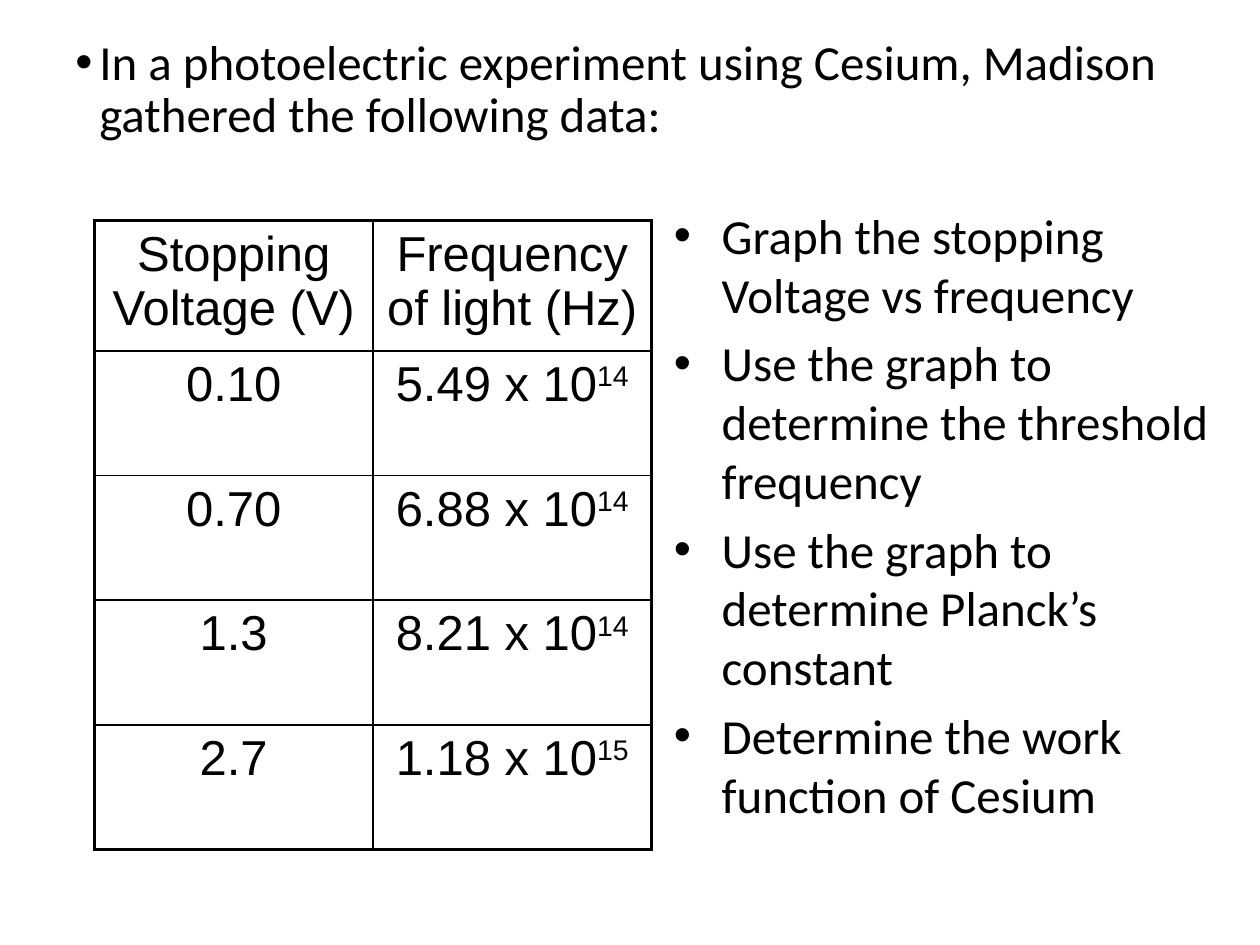
from dataclasses import dataclass

from lxml import etree
from pptx import Presentation
from pptx.dml.color import RGBColor
from pptx.enum.shapes import MSO_SHAPE
from pptx.enum.text import MSO_ANCHOR, PP_ALIGN
from pptx.oxml.ns import qn
from pptx.util import Inches, Pt

RECTANGLE = MSO_SHAPE.RECTANGLE
TOP = MSO_ANCHOR.TOP
LEFT, CENTER = PP_ALIGN.LEFT, PP_ALIGN.CENTER

COLORS = {"ink": "000000", "paper": "FFFFFF"}
TEXT_SIZE = Pt(28)
PARAGRAPH_GAP = Pt(5.6)
THICK, THIN = Pt(2.25), Pt(1)
COLUMN_WIDTH, ROW_HEIGHT = Inches(2.21), Inches(0.99)


@dataclass(frozen=True)
class Measurement:
    voltage: str
    mantissa: str
    exponent: str


HEADINGS = ("Stopping Voltage (V)", "Frequency of light (Hz)")
MEASUREMENTS = (
    Measurement("0.10", "5.49", "14"),
    Measurement("0.70", "6.88", "14"),
    Measurement("1.3", "8.21", "14"),
    Measurement("2.7", "1.18", "15"),
)
INTRODUCTION = (
    "In a photoelectric experiment using Cesium, "
    "Madison gathered the following data:"
)
TASKS = (
    "Graph the stopping Voltage vs frequency",
    "Use the graph to determine the threshold frequency",
    "Use the graph to determine Planck’s constant",
    "Determine the work function of Cesium",
)


def add_run(paragraph, text: str, font_name: str, superscript: bool = False) -> None:
    run = paragraph.add_run()
    run.text = text
    run.font.name = font_name
    run.font.size = TEXT_SIZE
    run.font.color.rgb = RGBColor.from_string(COLORS["ink"])
    if superscript:
        run.font._element.set("baseline", "30000")


def add_bullet(paragraph, text: str, indent: int, gap: int) -> None:
    paragraph.alignment = LEFT
    paragraph.space_before = gap
    properties = paragraph._p.get_or_add_pPr()
    properties.set("marL", str(indent))
    properties.set("indent", str(-indent))
    etree.SubElement(properties, qn("a:buFont"), typeface="Arial")
    etree.SubElement(properties, qn("a:buChar"), char="•")
    add_run(paragraph, text, "Calibri")


def set_borders(cell, row: int, column: int, last_row: int, last_column: int) -> None:
    outer_edges = {
        "a:lnL": column == 0,
        "a:lnR": column == last_column,
        "a:lnT": row == 0,
        "a:lnB": row == last_row,
    }
    properties = cell._tc.get_or_add_tcPr()
    for position, (tag, is_outer) in enumerate(outer_edges.items()):
        border = etree.Element(qn(tag), w=str(int(THICK if is_outer else THIN)))
        fill = etree.SubElement(border, qn("a:solidFill"))
        etree.SubElement(fill, qn("a:srgbClr"), val=COLORS["ink"])
        properties.insert(position, border)


def add_introduction(slide) -> None:
    box = slide.shapes.add_textbox(Inches(0.5), Inches(0.25), Inches(9.5), Inches(2.58))
    box.text_frame.word_wrap = True
    paragraph = box.text_frame.paragraphs[0]
    paragraph.line_spacing = 0.9
    add_bullet(paragraph, INTRODUCTION, Inches(0.19), Pt(7.5))


def add_data_table(slide) -> None:
    rows = [[(heading,) for heading in HEADINGS]]
    rows += [[(m.voltage,), (f"{m.mantissa} x 10", m.exponent)] for m in MEASUREMENTS]
    row_count, column_count = len(rows), len(HEADINGS)
    table = slide.shapes.add_table(
        row_count, column_count, Inches(0.75), Inches(1.75),
        COLUMN_WIDTH * column_count, ROW_HEIGHT * row_count,
    ).table
    table.first_row = table.horz_banding = False
    for row, entries in enumerate(rows):
        table.rows[row].height = ROW_HEIGHT
        for column, parts in enumerate(entries):
            cell = table.cell(row, column)
            cell.fill.background()
            set_borders(cell, row, column, row_count - 1, column_count - 1)
            paragraph = cell.text_frame.paragraphs[0]
            paragraph.alignment = CENTER
            paragraph.space_before = PARAGRAPH_GAP
            for index, part in enumerate(parts):
                add_run(paragraph, part, "Arial", superscript=index > 0)


def add_task_list(slide) -> None:
    panel = slide.shapes.add_shape(
        RECTANGLE, Inches(5.25), Inches(1.58), Inches(4.5), Inches(5.58)
    )
    panel.shadow.inherit = False
    panel.fill.solid()
    panel.fill.fore_color.rgb = RGBColor.from_string(COLORS["paper"])
    panel.line.fill.background()
    frame = panel.text_frame
    frame.word_wrap = True
    frame.vertical_anchor = TOP
    for index, task in enumerate(TASKS):
        paragraph = frame.add_paragraph() if index else frame.paragraphs[0]
        add_bullet(paragraph, task, Inches(0.38), PARAGRAPH_GAP)


def main() -> None:
    presentation = Presentation()
    presentation.slide_width = Inches(10)
    presentation.slide_height = Inches(7.5)
    slide = presentation.slides.add_slide(presentation.slide_layouts[6])
    add_introduction(slide)
    add_data_table(slide)
    add_task_list(slide)
    presentation.save("out.pptx")


if __name__ == "__main__":
    main()
